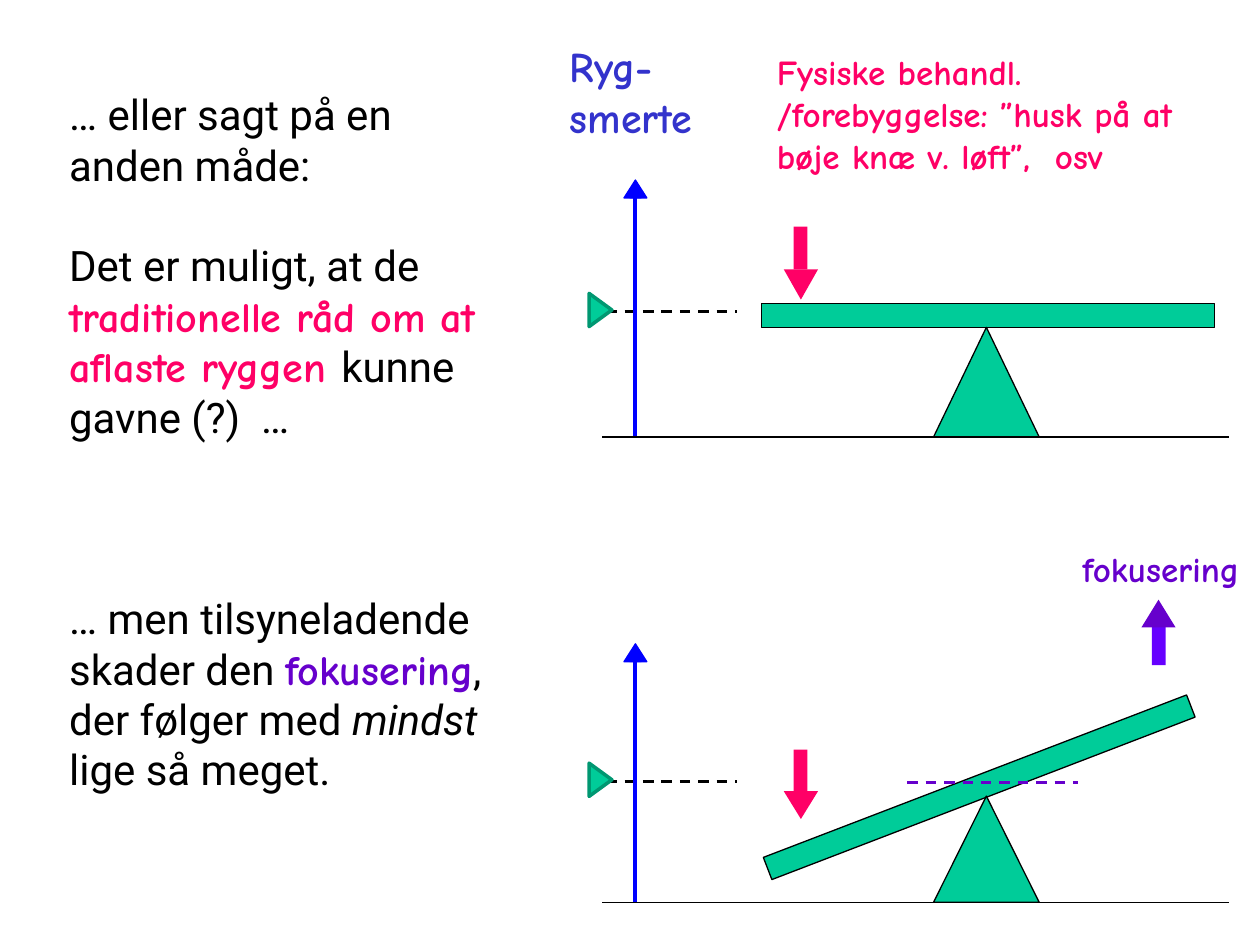
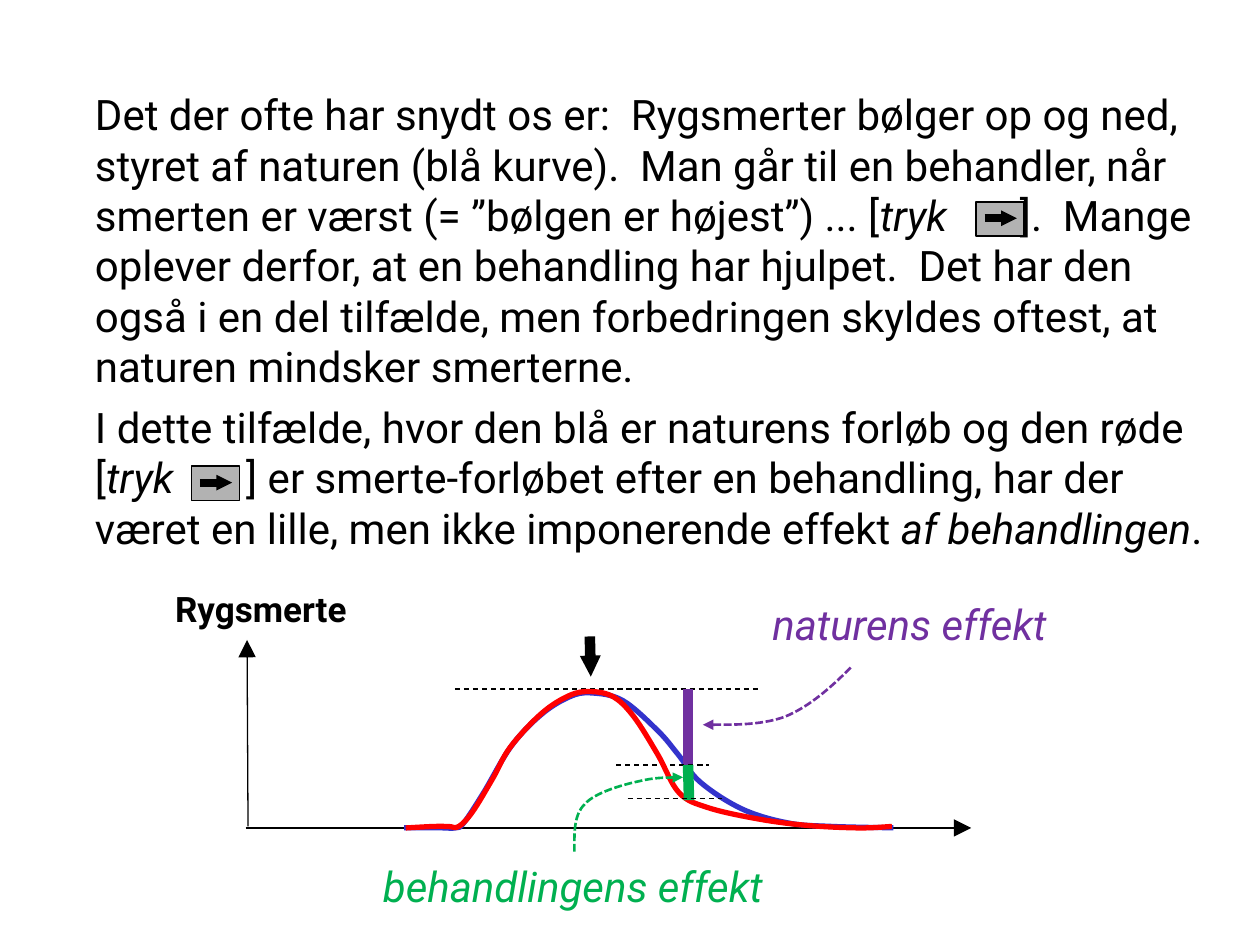
from dataclasses import dataclass

import lxml.etree
import pptx
import pptx.dml.color
import pptx.enum.dml
import pptx.enum.shapes
import pptx.enum.text
import pptx.oxml.ns
import pptx.util

Cm, Pt = pptx.util.Cm, pptx.util.Pt
RGBColor = pptx.dml.color.RGBColor
Kind = pptx.enum.shapes.MSO_SHAPE
Dash = pptx.enum.dml.MSO_LINE
qn = pptx.oxml.ns.qn

BLACK = RGBColor(0x00, 0x00, 0x00)
WHITE = RGBColor(0xFF, 0xFF, 0xFF)
GREY = RGBColor(0xB2, 0xB2, 0xB2)
TEAL = RGBColor(0x00, 0xCC, 0x99)
DARK_TEAL = RGBColor(0x00, 0x97, 0x71)
PINK = RGBColor(0xFF, 0x00, 0x66)
BLUE = RGBColor(0x00, 0x00, 0xFF)
INDIGO = RGBColor(0x33, 0x33, 0xCC)
VIOLET = RGBColor(0x66, 0x00, 0xCC)
BRIGHT_VIOLET = RGBColor(0x66, 0x00, 0xFF)
PURPLE = RGBColor(0x70, 0x30, 0xA0)
GREEN = RGBColor(0x00, 0xB0, 0x50)
RED = RGBColor(0xFF, 0x00, 0x00)
PLAIN_FONT, HAND_FONT = "Roboto", "Comic Neue"

Point = tuple[float, float]


@dataclass(frozen=True)
class Style:
    color: RGBColor = BLACK
    size: float = 24
    font: str = PLAIN_FONT
    bold: bool = False
    italic: bool = False
    spacing: float = 0


@dataclass(frozen=True)
class Para:
    runs: list[tuple[str, Style]]
    before: float = 0
    after: float = 0


@dataclass(frozen=True)
class Pen:
    color: RGBColor = BLACK
    width: float = 0.75
    dash: Dash | None = None
    arrow: str | None = None  # "headEnd" or "tailEnd"
    arrow_size: str = "med"


@dataclass(frozen=True)
class Label:
    text: str
    box: tuple[float, float, float, float]
    style: Style
    align: pptx.enum.text.PP_ALIGN | None = None
    fill: RGBColor | None = None


@dataclass(frozen=True)
class Seesaw:
    ground: float
    axis_top: float
    level: float
    marker_top: float
    fulcrum_top: float
    beam: Point
    tilt: float
    push_top: float
    stem: float
    tip: float


PLAIN = Style()
ITALIC = Style(italic=True)
ICON_GAP = Style(spacing=35.6)
PINK_HAND = Style(PINK, font=HAND_FONT, bold=True)
VIOLET_HAND = Style(VIOLET, font=HAND_FONT, bold=True)
THIN = Pen()
DASHED = Pen(dash=Dash.DASH)
LEVEL = Pen(width=1.5, dash=Dash.DASH)

SEESAWS = [
    Seesaw(8.81, 3.76, 6.28, 6.02, 6.6, (15.35, 6.12), 0, 4.57, 0.86, 0.61),
    Seesaw(18.19, 13.11, 15.75, 15.49, 16.05, (15.17, 15.63), 339, 15.11, 0.84, 0.56),
]
SEESAW_TEXT = [
    Para([("… eller sagt på en anden måde:", PLAIN)]),
    Para([("Det er muligt, at de ", PLAIN),
          ("traditionelle råd om at aflaste ryggen ", PINK_HAND),
          ("kunne gavne (?)  …", PLAIN)], before=28.8),
    Para([("… men tilsyneladende skader den ", PLAIN), ("fokusering", VIOLET_HAND),
          (", der følger med ", PLAIN), ("mindst", ITALIC),
          (" lige så meget.", PLAIN)], before=86.4),
]
SEESAW_LABELS = [
    Label("Ryg-smerte", (11.24, 0.7, 4.14, 2.31), Style(INDIGO, 24, HAND_FONT, True)),
    Label("Fysiske behandl. /forebyggelse: ”husk på at bøje knæ v. løft”,  osv",
          (15.41, 0.89, 8.69, 3.68), Style(PINK, 20, HAND_FONT, True)),
    Label("fokusering", (20.95, 10.92, 4.9, 1.12), Style(VIOLET, 20, HAND_FONT, True),
          pptx.enum.text.PP_ALIGN.CENTER),
]
CURVE_TEXT = [
    Para([("Det der ofte har snydt os er:  Rygsmerter bølger op og ned, styret af naturen "
           "(blå kurve).  Man går til en behandler, når smerten er værst "
           "(= ”bølgen er højest”) ... [", PLAIN), ("tryk", ITALIC), (" ", ICON_GAP),
          ("].  Mange oplever derfor, at en behandling har hjulpet.  Det har den også i en "
           "del tilfælde, men forbedringen skyldes oftest, at naturen mindsker smerterne.",
           PLAIN)], after=6),
    Para([("I dette tilfælde, hvor den blå er naturens forløb og den røde [", PLAIN),
          ("tryk", ITALIC), (" ", ICON_GAP),
          ("] er smerte-forløbet efter en behandling, har der været en lille, men ikke "
           "imponerende effekt ", PLAIN), ("af behandlingen", ITALIC), (".", PLAIN)],
         after=6),
]
NATURE_CURVE = [
    (8.15, 16.69), (8.86, 16.69), (9.19, 16.69), (9.35, 16.59), (9.75, 15.98),
    (10.31, 15.04), (10.92, 14.4), (11.48, 14.05), (11.91, 13.97), (12.55, 14.12),
    (13.26, 14.73), (13.67, 15.21), (14.12, 15.77), (14.96, 16.31), (15.88, 16.59),
    (16.74, 16.66), (18.01, 16.69)]
TREATED_CURVE = [
    (8.18, 16.69), (8.74, 16.66), (9.04, 16.66), (9.25, 16.66), (9.53, 16.36),
    (9.93, 15.7), (10.29, 15.06), (10.92, 14.38), (11.48, 14.02), (11.91, 13.94),
    (12.37, 14.05), (12.78, 14.45), (13.26, 15.21), (13.69, 15.98), (14.27, 16.28),
    (15.29, 16.51), (16.28, 16.64), (17.32, 16.69), (17.98, 16.66)]
NATURE_POINTER = [(17.15, 13.46), (16.74, 13.87), (16.31, 14.25), (15.82, 14.45),
                  (15.32, 14.63), (14.17, 14.61), (14.17, 14.61)]
TREATMENT_POINTER = [(11.58, 17.17), (11.58, 16.81), (11.56, 16.43), (11.79, 16.21),
                     (11.99, 15.98), (12.55, 15.82), (12.88, 15.75),
                     (13.21, 15.67), (13.77, 15.67), (13.77, 15.67)]


def apply_pen(line, pen: Pen) -> None:
    line.color.rgb = pen.color
    line.width = Pt(pen.width)
    if pen.dash is not None:
        line.dash_style = pen.dash
    if pen.arrow:
        lxml.etree.SubElement(line._get_or_add_ln(), qn(f"a:{pen.arrow}"), type="triangle",
                              w=pen.arrow_size, len=pen.arrow_size)


def add_line(s, start: Point, end: Point, pen: Pen = THIN) -> None:
    x1, y1, x2, y2 = map(Cm, (*start, *end))
    c = s.shapes.add_connector(pptx.enum.shapes.MSO_CONNECTOR.STRAIGHT, x1, y1, x2, y2)
    apply_pen(c.line, pen)
    lxml.etree.SubElement(c.element.spPr, qn("a:effectLst"))


def add_solid(s, kind: Kind, x: float, y: float, w: float, h: float, fill: RGBColor,
              pen: Pen | None = None, rotation: float = 0) -> None:
    sp = s.shapes.add_shape(kind, Cm(x), Cm(y), Cm(w), Cm(h))
    sp.shadow.inherit = False
    sp.fill.solid()
    sp.fill.fore_color.rgb = fill
    sp.rotation = rotation
    if pen:
        apply_pen(sp.line, pen)
    else:
        sp.line.fill.background()


def smooth_controls(knots: list[Point]) -> list[Point]:
    """Bézier control points of a smooth curve through all knots."""
    padded = [knots[0], *knots, knots[-1]]
    controls = [knots[0]]
    for a, b, c, d in zip(padded, padded[1:], padded[2:], padded[3:]):
        controls += [(b[0] + (c[0] - a[0]) / 6, b[1] + (c[1] - a[1]) / 6),
                     (c[0] - (d[0] - b[0]) / 6, c[1] - (d[1] - b[1]) / 6), c]
    return controls


def add_curve(s, controls: list[Point], pen: Pen) -> None:
    """Open freeform whose points, after the first, form cubic segments by threes."""
    first, *rest = [(Cm(x), Cm(y)) for x, y in controls]
    builder = s.shapes.build_freeform(*first)
    builder.add_line_segments(rest, close=False)
    sp = builder.convert_to_shape()
    sp.shadow.inherit = False
    sp.fill.background()
    apply_pen(sp.line, pen)
    segments = list(sp.element.iter(qn("a:lnTo")))
    for i in range(0, len(segments), 3):
        cubic = lxml.etree.Element(qn("a:cubicBezTo"))
        segments[i].addprevious(cubic)
        for segment in segments[i:i + 3]:
            cubic.append(segment[0])
            segment.getparent().remove(segment)


def style_run(r, style: Style) -> None:
    f = r.font
    f.name, f.size, f.bold, f.italic = style.font, Pt(style.size), style.bold, style.italic
    f.color.rgb = style.color
    if style.spacing:
        r._r.get_or_add_rPr().set("spc", str(round(style.spacing * 100)))


def add_label(s, label: Label) -> None:
    sp = s.shapes.add_textbox(*map(Cm, label.box))
    if label.fill is not None:
        sp.fill.solid()
        sp.fill.fore_color.rgb = label.fill
    tf = sp.text_frame
    tf.word_wrap = True
    tf.text = label.text
    p = tf.paragraphs[0]
    p.alignment = label.align
    style_run(p.runs[0], label.style)


def add_text_slide(prs, box: tuple[float, float, float, float], paras: list[Para]):
    """New slide whose body placeholder holds unbulleted paragraphs."""
    s = prs.slides.add_slide(prs.slide_layouts[1])
    title = s.shapes.title.element
    title.getparent().remove(title)
    body = s.placeholders[1]
    body.left, body.top, body.width, body.height = map(Cm, box)
    tf = body.text_frame
    tf.auto_size = pptx.enum.text.MSO_AUTO_SIZE.NONE
    tf.word_wrap = True
    for i, para in enumerate(paras):
        p = tf.add_paragraph() if i else tf.paragraphs[0]
        p.space_before, p.space_after = Pt(para.before), Pt(para.after)
        ppr = p._p.get_or_add_pPr()
        ppr.set("marL", "0")
        ppr.set("indent", "0")
        lxml.etree.SubElement(ppr, qn("a:buNone"))
        for text, style in para.runs:
            r = p.add_run()
            r.text = text
            style_run(r, style)
    return s


def add_seesaw(s, saw: Seesaw) -> None:
    add_line(s, (12.22, saw.level), (14.86, saw.level), LEVEL)
    add_solid(s, Kind.ISOSCELES_TRIANGLE, 11.77, saw.marker_top, 0.67, 0.46, TEAL,
              Pen(DARK_TEAL, 2), 90)
    add_solid(s, Kind.RECTANGLE, *saw.beam, 9.14, 0.48, TEAL, THIN, saw.tilt)
    add_solid(s, Kind.ISOSCELES_TRIANGLE, 18.82, saw.fulcrum_top, 2.13,
              saw.ground - saw.fulcrum_top, TEAL, THIN)
    add_line(s, (12.81, saw.axis_top), (12.81, saw.ground), Pen(BLUE, 2.25, arrow="headEnd"))
    add_solid(s, Kind.ISOSCELES_TRIANGLE, 12.58, saw.axis_top - 0.13, 0.46, 0.36, BLUE, Pen(BLUE))
    add_line(s, (12.14, saw.ground), (24.77, saw.ground))
    add_solid(s, Kind.RECTANGLE, 16, saw.push_top, 0.28, saw.stem, PINK)
    add_solid(s, Kind.ISOSCELES_TRIANGLE, 15.8, saw.push_top + saw.stem, 0.69, saw.tip, PINK,
              rotation=180)


def add_key_icon(s, x: float, y: float) -> None:
    add_solid(s, Kind.RECTANGLE, x, y, 0.97, 0.69, GREY, Pen(width=1))
    add_line(s, (x + 0.17, y + 0.33), (x + 0.82, y + 0.33),
             Pen(width=4.5, arrow="tailEnd", arrow_size="sm"))


def seesaw_slide(prs) -> None:
    s = add_text_slide(prs, (1.14, 1.66, 9.35, 15.65), SEESAW_TEXT)
    for label in SEESAW_LABELS:
        add_label(s, label)
    for saw in SEESAWS:
        add_seesaw(s, saw)
    add_solid(s, Kind.RECTANGLE, 23.22, 12.57, 0.28, 0.84, BRIGHT_VIOLET)
    add_solid(s, Kind.ISOSCELES_TRIANGLE, 23.01, 12.09, 0.69, 0.56, VIOLET)
    add_line(s, (18.29, 15.77), (21.74, 15.77), Pen(VIOLET, 1.5, Dash.DASH))


def curve_slide(prs) -> None:
    s = add_text_slide(prs, (1.66, 1.66, 23.47, 10.95), CURVE_TEXT)
    for corner in [(3.86, 9.4), (19.68, 4.07)]:
        add_key_icon(s, *corner)
    axis = Pen(arrow="tailEnd", arrow_size="lg")
    add_line(s, (4.95, 16.69), (19.58, 16.69), axis)
    add_curve(s, smooth_controls(NATURE_CURVE), Pen(INDIGO, 3))
    add_line(s, (11.89, 12.83), (11.91, 13.64),
             Pen(width=6, arrow="tailEnd", arrow_size="sm"))
    add_line(s, (9.17, 13.89), (15.32, 13.89), DASHED)
    add_line(s, (13.87, 13.89), (13.87, 15.42), Pen(PURPLE, 6))
    add_curve(s, NATURE_POINTER, Pen(PURPLE, 1.5, Dash.SQUARE_DOT, "tailEnd"))
    add_line(s, (12.42, 15.42), (14.3, 15.42), DASHED)
    add_line(s, (5, 16.66), (4.98, 12.9), axis)
    add_curve(s, smooth_controls(TREATED_CURVE), Pen(RED, 3))
    add_line(s, (13.87, 15.42), (13.89, 16.13), Pen(GREEN, 6))
    for label in [
        Label("naturens effekt", (15.32, 11.94, 9.22, 1.68), Style(PURPLE, italic=True)),
        Label("behandlingens effekt", (7.47, 17.22, 10.74, 1.68), Style(GREEN, italic=True),
              fill=WHITE),
        Label("Rygsmerte", (3.28, 11.71, 6.35, 1.12), Style(size=20, bold=True)),
    ]:
        add_label(s, label)
    add_line(s, (12.65, 16.1), (14.55, 16.1), DASHED)
    add_curve(s, TREATMENT_POINTER, Pen(GREEN, 1.5, Dash.SQUARE_DOT, "tailEnd"))


def main() -> None:
    prs = pptx.Presentation()
    prs.slide_width, prs.slide_height = Cm(25.4), Cm(19.05)
    background = prs.slide_master.background.fill
    background.solid()
    background.fore_color.rgb = WHITE
    seesaw_slide(prs)
    curve_slide(prs)
    prs.save("out.pptx")


if __name__ == "__main__":
    main()
